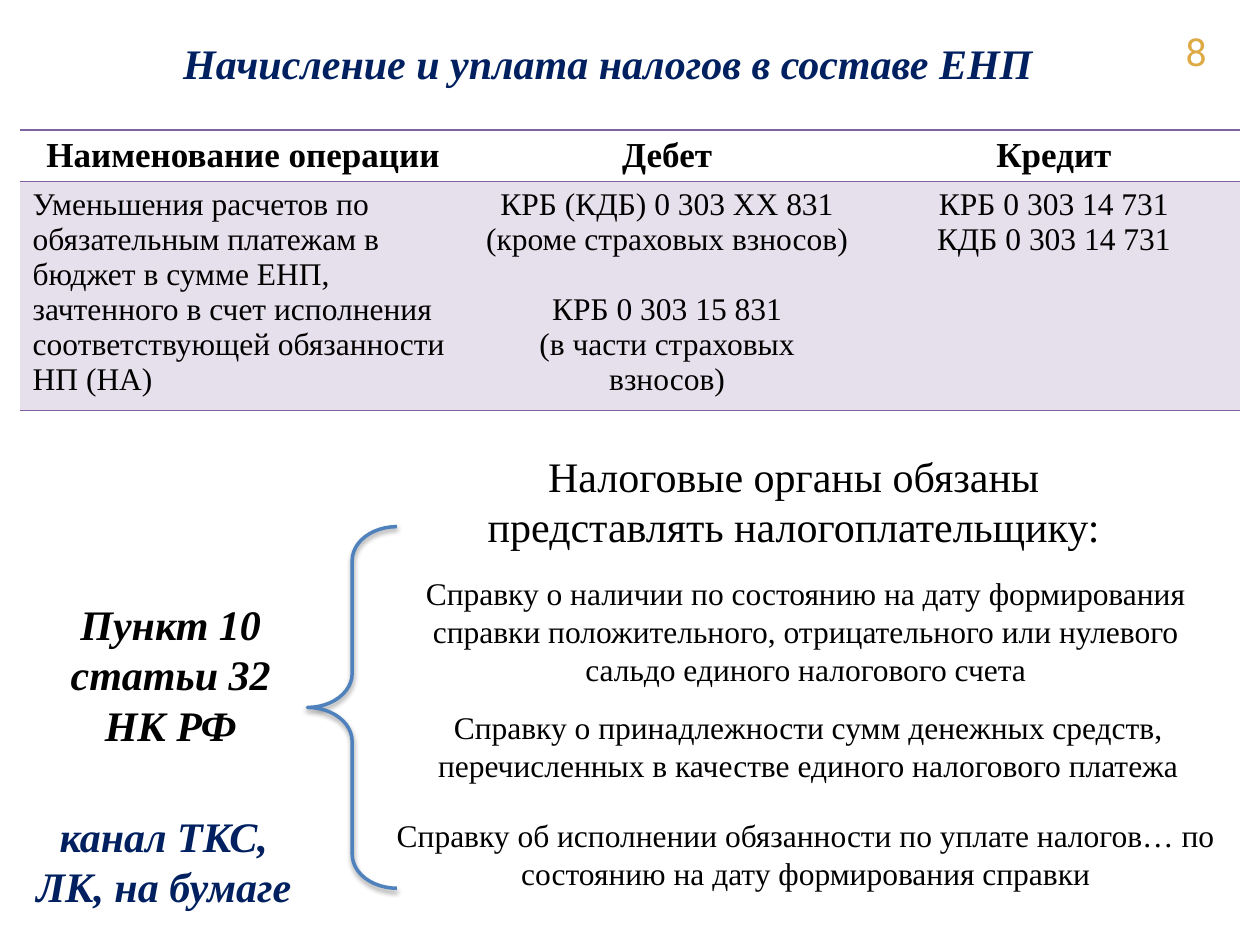
from typing import NamedTuple

from lxml import etree
from pptx import Presentation
from pptx.dml.color import RGBColor
from pptx.enum import shapes, text
from pptx.oxml import ns
from pptx.util import Inches, Pt

BLACK = RGBColor(0x00, 0x00, 0x00)
NAVY = RGBColor(0x00, 0x20, 0x60)
GOLD = RGBColor(0xDE, 0xAA, 0x46)
BLUE = RGBColor(0x4F, 0x81, 0xBD)
PURPLE = RGBColor(0x80, 0x64, 0xA2)
LILAC = RGBColor(0xE6, 0xE0, 0xEC)

CENTER, LEFT = text.PP_ALIGN.CENTER, text.PP_ALIGN.LEFT
MIDDLE, TOP = text.MSO_ANCHOR.MIDDLE, text.MSO_ANCHOR.TOP


class Style(NamedTuple):
    size: float
    color: RGBColor = BLACK
    bold: bool = False
    italic: bool = False
    font: str = "Times New Roman"
    align: text.PP_ALIGN = CENTER


class Label(NamedTuple):
    left: float
    top: float
    width: float
    height: float
    wording: str
    style: Style
    anchor: text.MSO_ANCHOR = MIDDLE


BODY = Style(18)
HEADER = Style(20, bold=True)
NAVY_ACCENT = Style(24, NAVY, bold=True, italic=True)
BLACK_ACCENT = NAVY_ACCENT._replace(color=BLACK)
PAGE_NUMBER = Style(22, GOLD, font="Roboto", align=LEFT)

LABELS = [
    Label(9.31, 0.11, 0.69, 0.59, "8", PAGE_NUMBER),
    Label(0.71, 0.25, 8.23, 0.5, "Начисление и уплата налогов в составе ЕНП", NAVY_ACCENT, TOP),
    Label(0.39, 4.45, 1.93, 1.8, "Пункт 10 статьи 32 НК РФ", BLACK_ACCENT),
    Label(3.72, 3.65, 5.16, 0.65,
          "Налоговые органы обязаны представлять налогоплательщику:", Style(24)),
    Label(2.95, 4.58, 6.89, 0.86,
          "Справку о наличии по состоянию на дату формирования справки положительного, "
          "отрицательного или нулевого сальдо единого налогового счета", BODY),
    Label(2.97, 5.49, 6.89, 0.86,
          "Справку о принадлежности сумм денежных средств, перечисленных в качестве "
          "единого налогового платежа", BODY),
    Label(2.95, 6.35, 6.89, 0.86,
          "Справку об исполнении обязанности по уплате налогов… по состоянию на дату "
          "формирования справки", BODY),
    Label(0.16, 6.24, 2.28, 1.18, "канал ТКС, ЛК, на бумаге", NAVY_ACCENT),
]

COLUMN_WIDTHS = [3.54, 3.19, 2.95]
ROW_HEIGHTS = [0.41, 1.82]
HEADINGS = ["Наименование операции", "Дебет", "Кредит"]
OPERATION = ("Уменьшения расчетов по обязательным платежам в бюджет в сумме ЕНП, "
             "зачтенного в счет исполнения соответствующей обязанности НП (НА)")
DEBIT = ["КРБ (КДБ) 0 303 ХХ 831 (кроме страховых взносов)",
         "КРБ 0 303 15 831\n(в части страховых взносов)"]
CREDIT = ["КРБ 0 303 14 731", "КДБ 0 303 14 731"]


def write(frame, paragraphs: list[str], style: Style, gap: float = 0) -> None:
    """Fill a text frame; gap is the space in points between paragraphs."""
    for index, wording in enumerate(paragraphs):
        paragraph = frame.add_paragraph() if index else frame.paragraphs[0]
        paragraph.alignment = style.align
        if index:
            paragraph.space_before = Pt(gap)
        for number, line in enumerate(wording.split("\n")):
            if number:
                paragraph.add_line_break()
            run = paragraph.add_run()
            run.text = line
            font = run.font
            font.name, font.size = style.font, Pt(style.size)
            font.bold, font.italic = style.bold, style.italic
            font.color.rgb = style.color


def add_label(slide, label: Label) -> None:
    box = slide.shapes.add_textbox(*map(Inches, label[:4]))
    box.text_frame.word_wrap = True
    box.text_frame.vertical_anchor = label.anchor
    write(box.text_frame, [label.wording], label.style)


def set_borders(cell, ruled: tuple[str, ...]) -> None:
    """Rule the named sides of a cell and clear the others."""
    properties = cell._tc.get_or_add_tcPr()
    for index, side in enumerate(("lnL", "lnR", "lnT", "lnB")):
        line = etree.Element(ns.qn(f"a:{side}"), w=str(Pt(1)))
        if side in ruled:
            fill = etree.SubElement(line, ns.qn("a:solidFill"))
            etree.SubElement(fill, ns.qn("a:srgbClr"), val=str(PURPLE))
        else:
            etree.SubElement(line, ns.qn("a:noFill"))
        properties.insert(index, line)


def add_postings(slide) -> None:
    frame = slide.shapes.add_table(2, 3, Inches(0.16), Inches(1.03),
                                   Inches(sum(COLUMN_WIDTHS)), Inches(sum(ROW_HEIGHTS)))
    table = frame.table
    table.first_row = table.horz_banding = False
    for column, width in zip(table.columns, COLUMN_WIDTHS):
        column.width = Inches(width)
    for row, height in zip(table.rows, ROW_HEIGHTS):
        row.height = Inches(height)

    for index, heading in enumerate(HEADINGS):
        cell = table.cell(0, index)
        cell.fill.background()
        set_borders(cell, ("lnT", "lnB"))
        write(cell.text_frame, [heading], HEADER)

    entries = [([OPERATION], BODY._replace(align=LEFT), 0), (DEBIT, BODY, 20), (CREDIT, BODY, 0)]
    for index, (paragraphs, style, gap) in enumerate(entries):
        cell = table.cell(1, index)
        cell.fill.solid()
        cell.fill.fore_color.rgb = LILAC
        set_borders(cell, ("lnT", "lnB"))
        write(cell.text_frame, paragraphs, style, gap)
    debit = table.cell(1, 1)
    debit.margin_left = debit.margin_right = Inches(0.13)


def add_brace(slide) -> None:
    brace = slide.shapes.add_shape(shapes.MSO_SHAPE.LEFT_BRACE, Inches(2.44), Inches(4.18),
                                   Inches(0.71), Inches(2.87))
    brace.adjustments[0], brace.adjustments[1] = 0.38, 0.5
    brace.fill.background()
    brace.line.color.rgb = BLUE
    brace.line.width = Pt(2)
    # Soft shadow straight below the brace
    brace.shadow.inherit = False
    effects = brace._element.spPr.find(ns.qn("a:effectLst"))
    shadow = etree.SubElement(effects, ns.qn("a:outerShdw"), blurRad=str(Pt(3.1)),
                              dist=str(Pt(1.6)), dir="5400000", rotWithShape="0")
    color = etree.SubElement(shadow, ns.qn("a:srgbClr"), val=str(BLACK))
    etree.SubElement(color, ns.qn("a:alpha"), val="38000")


def main() -> None:
    deck = Presentation()
    deck.slide_width, deck.slide_height = Inches(10), Inches(7.5)
    slide = deck.slides.add_slide(deck.slide_layouts[6])

    # Table of postings
    add_postings(slide)
    # Brace joining the article to the duties
    add_brace(slide)
    # Page number, title and notes
    for label in LABELS:
        add_label(slide, label)

    deck.save("out.pptx")


if __name__ == "__main__":
    main()
